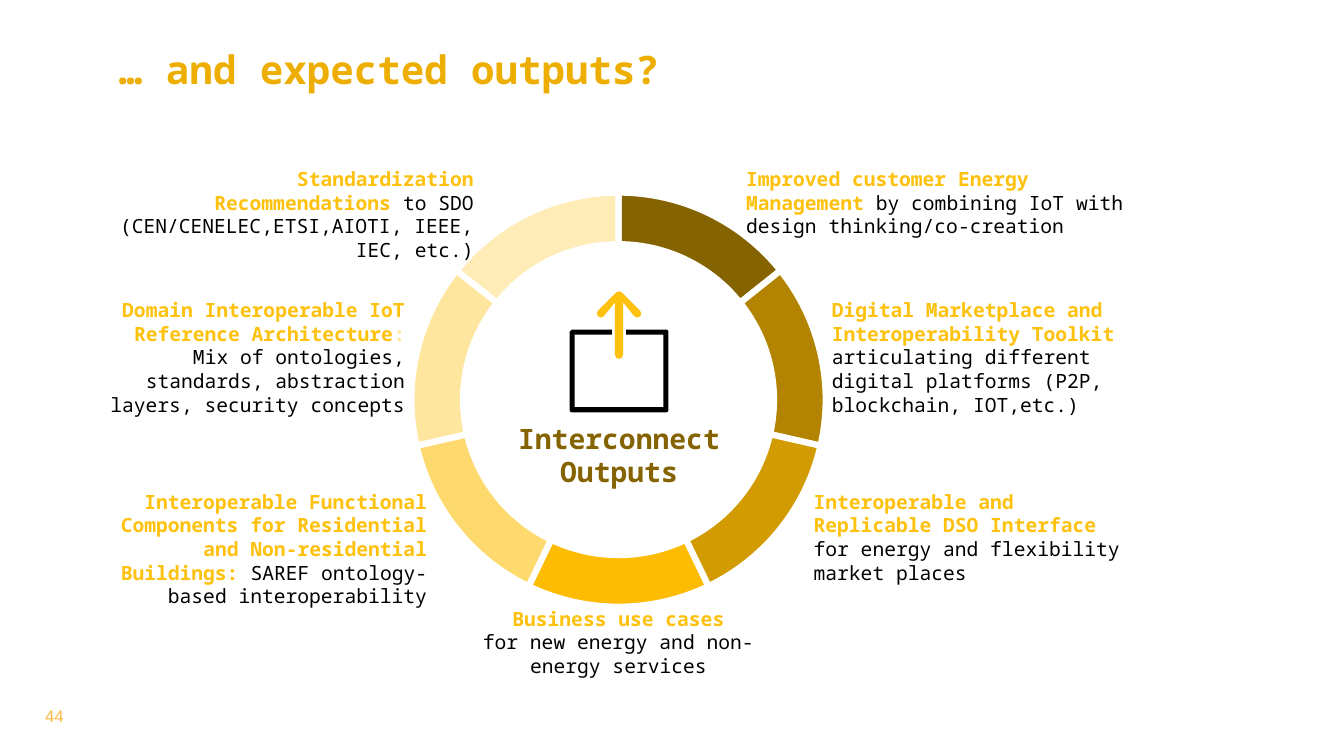
from dataclasses import dataclass
from math import cos, radians, sin, tan

from lxml import etree
from pptx import Presentation
from pptx.dml.color import RGBColor
from pptx.enum import text as t
from pptx.oxml.ns import qn
from pptx.util import Inches, Pt


@dataclass(frozen=True)
class Theme:
    font: str = "Noto Sans Mono"
    plain: str = "Arial"
    title: str = "EDAE00"
    page: str = "FFB944"
    gold: str = "FEC10D"
    dark: str = "856301"
    pale: str = "FFE69E"
    black: str = "000000"
    white: str = "FFFFFF"
    ring: tuple = ("856301", "B38401", "D19B01", "FDBB01",
                   "FEDA6E", "FFE69E", "FFECB7")
    head: int = 28
    hub: int = 20
    body: int = 14
    small: int = 12


TH = Theme()
LEFT, MID, RIGHT = t.PP_ALIGN.LEFT, t.PP_ALIGN.CENTER, t.PP_ALIGN.RIGHT

# Box, alignment, bold lead, and the plain words after it
NOTES = [
    ((7.4, 1.66, 3.78, 0.71), LEFT, "Improved customer Energy Management ",
     "by combining IoT with design thinking/co-creation"),
    ((8.25, 2.96, 2.93, 0.94), LEFT,
     "Digital Marketplace and Interoperability Toolkit ",
     "articulating different digital platforms (P2P, blockchain, IOT,etc.)"),
    ((8.07, 4.86, 3.11, 0.94), LEFT,
     "Interoperable and Replicable DSO Interface ",
     "for energy and flexibility market places"),
    ((4.58, 6.02, 3.11, 0.71), MID, "Business use cases\n",
     "for new energy and non-energy services"),
    ((1.08, 4.86, 3.16, 0.94), RIGHT,
     "Interoperable Functional Components for Residential and "
     "Non-residential Buildings: ", "SAREF ontology-based interoperability"),
    ((1.08, 2.96, 2.94, 0.94), RIGHT,
     "Domain Interoperable IoT Reference Architecture",
     "Mix of ontologies, standards, abstraction layers, security concepts"),
    ((1.08, 1.66, 3.62, 0.47), RIGHT, "Standardization Recommendations ",
     "to SDO (CEN/CENELEC,ETSI,AIOTI, IEEE, IEC, etc.)"),
]


def style(run, size, color, bold=False, font=TH.font):
    run.font.name, run.font.size, run.font.bold = font, Pt(size), bold
    run.font.color.rgb = RGBColor.from_string(color)


def add_text(slide, box, parts, size, align, wrap=True):
    """Add a box without insets, holding one paragraph of styled parts."""
    frame = slide.shapes.add_textbox(*map(Inches, box)).text_frame
    frame.margin_left = frame.margin_right = 0
    frame.margin_top = frame.margin_bottom = 0
    frame.word_wrap = wrap
    frame.auto_size = t.MSO_AUTO_SIZE.SHAPE_TO_FIT_TEXT
    para = frame.paragraphs[0]
    para.alignment = align
    for words, color, bold in parts:
        for i, line in enumerate(words.split("\n")):
            if i:
                para.add_line_break()
            if line:
                run = para.add_run()
                run.text = line
                style(run, size, color, bold)
    for gap in para._p.findall(qn("a:br")):
        etree.SubElement(gap, qn("a:rPr"), sz=str(size * 100))


def add_title(slide, box, words):
    title = slide.shapes.title
    title.left, title.top, title.width, title.height = map(Inches, box)
    frame = title.text_frame
    frame.text = words
    frame.vertical_anchor = t.MSO_ANCHOR.TOP
    frame.paragraphs[0].alignment = LEFT
    style(frame.paragraphs[0].runs[0], TH.head, TH.title, True)


def add_page(slide, box, number):
    frame = slide.shapes.add_textbox(*map(Inches, box)).text_frame
    frame.word_wrap = True
    frame.text = number
    frame.vertical_anchor = t.MSO_ANCHOR.MIDDLE
    frame.paragraphs[0].alignment = MID
    style(frame.paragraphs[0].runs[0], TH.small, TH.page, font=TH.plain)


def arc(x, y, r, start, end):
    """A line to the start and one curve; angles run clockwise from the top."""
    a, b = radians(start), radians(end)
    k = 4 / 3 * tan((b - a) / 4) * r
    p = x + r * sin(a), y - r * cos(a)
    q = x + r * sin(b), y - r * cos(b)
    return [(p,), ((p[0] + k * cos(a), p[1] + k * sin(a)),
                   (q[0] - k * cos(b), q[1] - k * sin(b)), q)]


def add_form(slide, steps, fill, edge=None):
    """Add an outline of steps: one point is a line, three are a curve."""
    dots = [(Inches(x), Inches(y)) for step in steps for x, y in step]
    pen = slide.shapes.build_freeform(*dots[0])
    pen.add_line_segments(dots[1:], close=True)
    form = pen.convert_to_shape()
    lines = iter(list(form._element.iter(qn("a:lnTo"))))
    for step in steps[1:]:
        group = [next(lines) for _ in step]
        if len(group) == 3:
            curve = etree.Element(qn("a:cubicBezTo"))
            group[0].addprevious(curve)
            for line in group:
                curve.append(line[0])
                line.getparent().remove(line)
    form.shadow.inherit = False
    form.fill.solid()
    form.fill.fore_color.rgb = RGBColor.from_string(fill)
    if edge:
        form.line.color.rgb = RGBColor.from_string(TH.white)
        form.line.width = Pt(edge)
    else:
        form.line.fill.background()


def add_ring(slide, box):
    x, y, w, h = box
    mid, half, r = x + w / 2, y + h / 2, w / 2
    turn = 360 / len(TH.ring)
    for i, color in enumerate(TH.ring):
        a, b = i * turn, (i + 1) * turn
        steps = arc(mid, half, r, a, b) + arc(mid, half, 0.75 * r, b, a)
        add_form(slide, steps, color, 4.5)


def add_icon(slide, box):
    """Draw an open tray with an arrow rising out of it."""
    x, y, w, h = box
    mid, right, end = x + w / 2, x + w, y + h
    arrow = (arc(mid, y + 0.04, 0.04, -45, 45)
             + arc(mid + 0.18, y + 0.22, 0.04, 45, 225)
             + [((mid + 0.04, y + 0.11),)]
             + arc(mid, y + 0.63, 0.04, 90, 270)
             + [((mid - 0.04, y + 0.11),)]
             + arc(mid - 0.18, y + 0.22, 0.04, 135, 315))
    add_form(slide, arrow, TH.gold)
    top, gap, wall, r = y + 0.38, 0.07, 0.05, 0.02
    inner = [(mid - gap, top + wall), (x + wall, top + wall),
             (x + wall, end - wall), (right - wall, end - wall),
             (right - wall, top + wall), (mid + gap, top + wall)]
    tray = ([((mid + gap, top),)]
            + arc(right - r, top + r, r, 0, 90)
            + arc(right - r, end - r, r, 90, 180)
            + arc(x + r, end - r, r, 180, 270)
            + arc(x + r, top + r, r, 270, 360)
            + [((mid - gap, top),)] + [(dot,) for dot in inner])
    add_form(slide, tray, TH.black)


def add_hub(slide, box):
    x, y, w, h = box
    add_text(slide, (x, y + h - 0.67, w, 0.67),
             [("Interconnect\nOutputs", TH.dark, True)], TH.hub, MID, False)
    add_icon(slide, (x + (w - 0.98) / 2, y, 0.98, 1.2))


def add_note(slide, box, align, lead, words):
    parts = [(lead, TH.gold, True), (words, TH.black, False)]
    if lead.endswith("Architecture"):
        parts.insert(1, (": ", TH.pale, True))
    add_text(slide, box, parts, TH.body, align)


def main():
    deck = Presentation()
    deck.slide_width, deck.slide_height = Inches(13.33), Inches(7.5)
    slide = deck.slides.add_slide(deck.slide_layouts[5])
    add_title(slide, (1.08, 0.4, 10.12, 0.9), "… and expected outputs?")
    add_page(slide, (0, 6.71, 1.08, 0.79), "44")
    add_ring(slide, (4.08, 1.91, 4.11, 4.11))
    add_hub(slide, (5.13, 2.89, 2.02, 1.96))
    for note in NOTES:
        add_note(slide, *note)
    deck.save("out.pptx")


if __name__ == "__main__":
    main()
